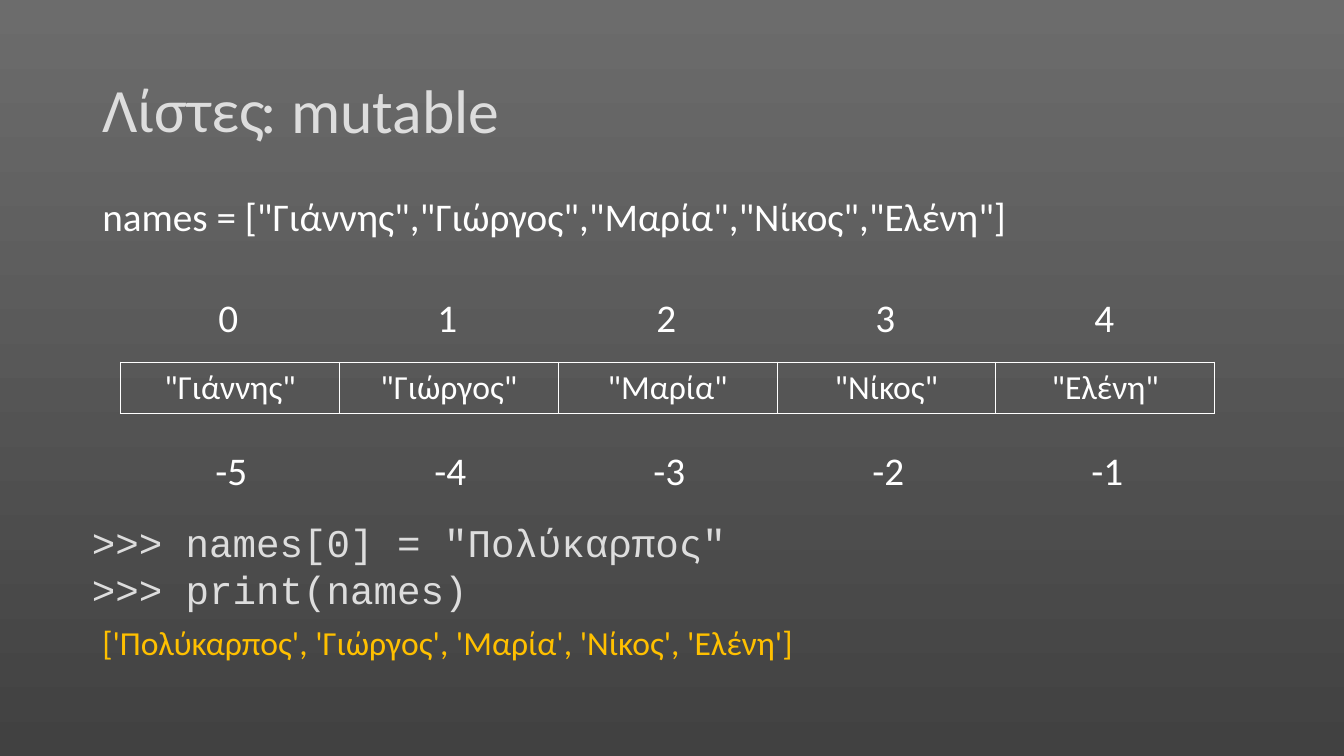
"""Build a slide showing that Python lists are mutable."""
from dataclasses import dataclass
from typing import Any

from lxml.etree import SubElement
from pptx import Presentation
from pptx.dml.color import RGBColor
from pptx.enum.text import MSO_ANCHOR, MSO_AUTO_SIZE, PP_ALIGN
from pptx.oxml.ns import qn
from pptx.slide import Slide
from pptx.util import Pt

PX = 9525


@dataclass(frozen=True)
class Theme:
    sans: str = "Calibri"
    mono: str = "Courier New"
    white: str = "FFFFFF"
    soft: str = "DDDDDD"
    amber: str = "FFC000"
    background: tuple[str, str] = ("6C6C6C", "414141")
    title: int = 44
    body: int = 28
    small: int = 24


THEME = Theme()


@dataclass(frozen=True)
class Style:
    size: int
    color: str
    font: str = THEME.sans


@dataclass(frozen=True)
class Box:
    x: int
    y: int
    w: int
    h: int


@dataclass(frozen=True)
class Label:
    box: Box
    lines: tuple[str, ...]
    style: Style
    frame: dict[str, Any]
    spacing: float = 1.0


@dataclass(frozen=True)
class Strip:
    box: Box
    values: tuple[str, ...]
    style: Style
    bordered: bool = False


def apply(target: Any, values: dict[str, Any]) -> None:
    for name, value in values.items():
        setattr(target, name, value)


def emu(box: Box) -> tuple[int, ...]:
    return tuple(n * PX for n in (box.x, box.y, box.w, box.h))


def write(p: Any, text: str, style: Style) -> None:
    r = p.add_run()
    r.text = text
    apply(r.font, {"size": Pt(style.size), "name": style.font})
    r.font.color.rgb = RGBColor.from_string(style.color)


def draw_label(s: Slide, label: Label) -> None:
    tf = s.shapes.add_textbox(*emu(label.box)).text_frame
    apply(tf, label.frame)
    for i, line in enumerate(label.lines):
        p = tf.add_paragraph() if i else tf.paragraphs[0]
        p.line_spacing = label.spacing
        write(p, line, label.style)


def set_borders(cell: Any, bordered: bool) -> None:
    tc_pr = cell._tc.get_or_add_tcPr()
    for side in ("a:lnL", "a:lnR", "a:lnT", "a:lnB"):
        ln = SubElement(tc_pr, qn(side), w=str(Pt(1)))
        if bordered:
            fill = SubElement(ln, qn("a:solidFill"))
            SubElement(fill, qn("a:srgbClr"), val=THEME.white)
        else:
            SubElement(ln, qn("a:noFill"))


def draw_strip(s: Slide, strip: Strip) -> None:
    table = s.shapes.add_table(1, len(strip.values), *emu(strip.box)).table
    apply(table, {"first_row": False, "horz_banding": False})
    for cell, value in zip(table.iter_cells(), strip.values):
        set_borders(cell, strip.bordered)
        cell.fill.background()
        p = cell.text_frame.paragraphs[0]
        p.alignment = PP_ALIGN.CENTER
        write(p, value, strip.style)


def paint_background(s: Slide) -> None:
    fill = s.background.fill
    fill.gradient()
    fill.gradient_angle = 270
    for stop, color in zip(fill.gradient_stops, THEME.background):
        stop.color.rgb = RGBColor.from_string(color)


def main() -> None:
    names = ("Γιάννης", "Γιώργος", "Μαρία", "Νίκος", "Ελένη")
    quoted = tuple(f'"{name}"' for name in names)
    count = len(names)
    updated = ["Πολύκαρπος", *names[1:]]

    heading = Style(THEME.title, THEME.soft)
    body = Style(THEME.body, THEME.white)
    code = Style(THEME.body, THEME.soft, THEME.mono)
    item = Style(THEME.small, THEME.white)
    result = Style(THEME.small, THEME.amber)

    middle = {"word_wrap": True, "vertical_anchor": MSO_ANCHOR.MIDDLE}
    wrapped = {"word_wrap": True, "auto_size": MSO_AUTO_SIZE.SHAPE_TO_FIT_TEXT}
    single = {**wrapped, "word_wrap": False}

    strips = (
        Strip(Box(115, 345, 1042, 48), quoted, item, bordered=True),
        Strip(Box(113, 276, 1043, 55), tuple(map(str, range(count))), body),
        Strip(Box(116, 422, 1043, 55), tuple(map(str, range(-count, 0))), body),
    )
    labels = (
        Label(Box(88, 38, 1104, 139), ("Λίστες",), heading, middle, 0.9),
        Label(Box(88, 178, 891, 55), (f"names = [{','.join(quoted)}]",), body, single),
        Label(Box(78, 489, 643, 100),
              ('>>> names[0] = "Πολύκαρπος"', ">>> print(names)"), code, wrapped),
        Label(Box(88, 588, 682, 48), (str(updated),), result, single),
        Label(Box(239, 64, 541, 81), (": mutable",), heading, wrapped),
    )

    prs = Presentation()
    apply(prs, {"slide_width": 1280 * PX, "slide_height": 720 * PX})
    s = prs.slides.add_slide(prs.slide_layouts[6])
    paint_background(s)
    for strip in strips:
        draw_strip(s, strip)
    for label in labels:
        draw_label(s, label)
    prs.save("out.pptx")


if __name__ == "__main__":
    main()
